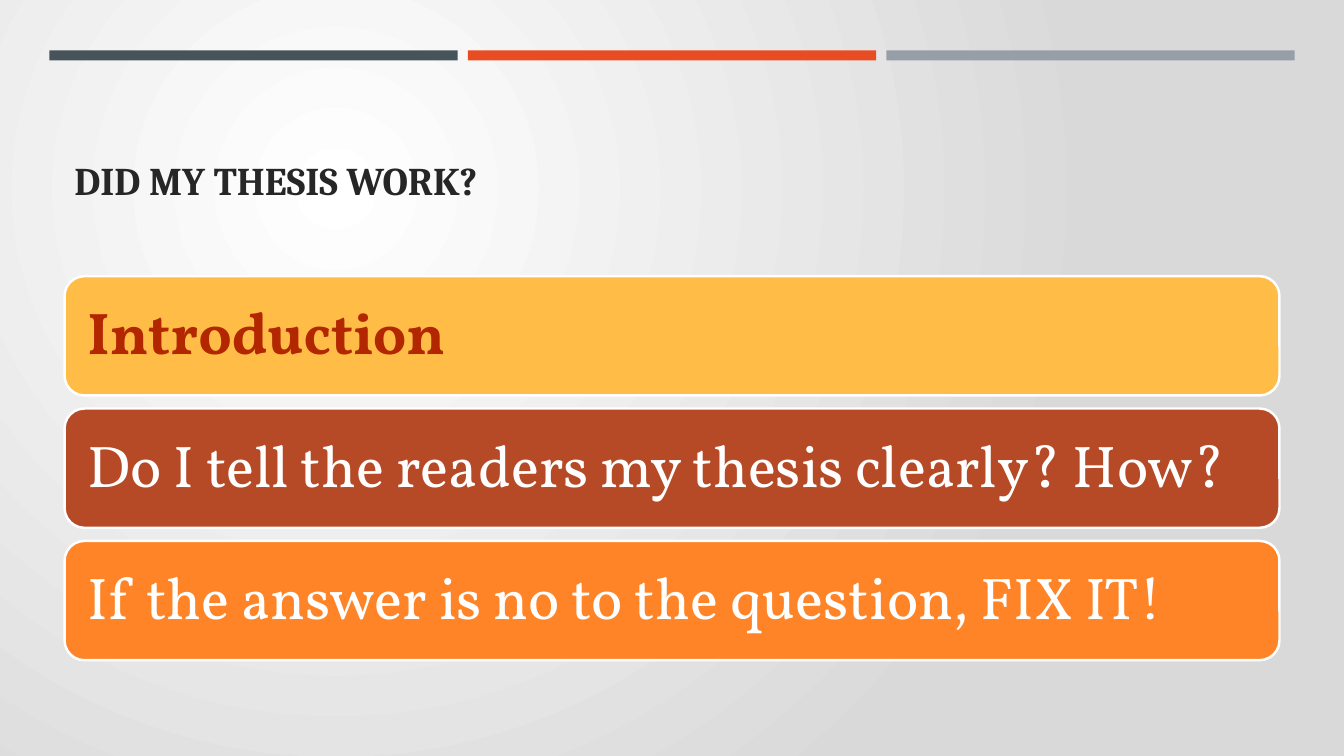
from dataclasses import dataclass

from lxml.etree import SubElement
from pptx import Presentation
from pptx.dml.color import RGBColor
from pptx.enum.shapes import MSO_SHAPE
from pptx.enum.text import MSO_ANCHOR, PP_ALIGN
from pptx.oxml.ns import qn
from pptx.util import Inches, Pt


@dataclass(frozen=True)
class Theme:
    head_font: str = "Cambria"
    body_font: str = "Vollkorn"
    head_size: int = 28
    body_size: int = 42
    ink: str = "262626"
    white: str = "FFFFFF"
    gray: str = "D9D9D9"
    red: str = "B22600"
    bars: tuple = ("465359", "E84C22", "969FA7")
    cards: tuple = ("FFBD47", "B64926", "FF8427")


@dataclass(frozen=True)
class Box:
    left: float
    top: float
    width: float
    height: float

    def inches(self):
        return [Inches(v) for v in (self.left, self.top, self.width, self.height)]

    def columns(self, count, gap):
        width = (self.width - gap * (count - 1)) / count
        return [Box(self.left + i * (width + gap), self.top, width, self.height)
                for i in range(count)]

    def rows(self, count, gap):
        height = (self.height - gap * (count - 1)) / count
        return [Box(self.left, self.top + i * (height + gap), self.width, height)
                for i in range(count)]


THEME = Theme()
WIDTH, HEIGHT = 13.33, 7.5


def color(code):
    return RGBColor.from_string(code)


def backdrop(slide):
    fill = slide.background.fill
    fill.gradient()
    for stop, place, code in zip(fill.gradient_stops, (0, 1), (THEME.white, THEME.gray)):
        stop.position = place
        stop.color.rgb = color(code)
    grad = slide.element.find(".//" + qn("a:gradFill"))
    grad.remove(grad.find(qn("a:lin")))
    round_path = SubElement(grad, qn("a:path"), {"path": "circle"})
    SubElement(round_path, qn("a:fillToRect"),
               {"l": "50000", "t": "50000", "r": "100000", "b": "100000"})


def panel(slide, kind, box, code):
    shape = slide.shapes.add_shape(kind, *box.inches())
    shape.shadow.inherit = False
    shape.fill.solid()
    shape.fill.fore_color.rgb = color(code)
    shape.line.fill.background()
    return shape


def write(frame, text, face, size, code, bold, anchor):
    frame.word_wrap = True
    frame.vertical_anchor = anchor
    line = frame.paragraphs[0]
    line.alignment = PP_ALIGN.LEFT
    line.line_spacing = 0.9
    run = line.add_run()
    run.text = text
    run.font.name = face
    run.font.size = Pt(size)
    run.font.bold = bold
    run.font.color.rgb = color(code)


def stripes(slide, box):
    for cell, code in zip(box.columns(len(THEME.bars), 0.1), THEME.bars):
        panel(slide, MSO_SHAPE.RECTANGLE, cell, code)


def heading(slide, box, text):
    frame = slide.shapes.add_textbox(*box.inches()).text_frame
    write(frame, text, THEME.head_font, THEME.head_size, THEME.ink, True,
          MSO_ANCHOR.BOTTOM)


def cards(slide, box, items):
    cells = box.rows(len(items), 0.13)
    for cell, code, (text, ink, bold) in zip(cells, THEME.cards, items):
        card = panel(slide, MSO_SHAPE.ROUNDED_RECTANGLE, cell, code)
        card.line.color.rgb = color(THEME.white)
        card.line.width = Pt(1.75)
        frame = card.text_frame
        frame.margin_left = frame.margin_right = Inches(0.17)
        frame.margin_top = frame.margin_bottom = Inches(0.17)
        write(frame, text, THEME.body_font, THEME.body_size, ink, bold,
              MSO_ANCHOR.MIDDLE)


def main():
    deck = Presentation()
    deck.slide_width, deck.slide_height = Inches(WIDTH), Inches(HEIGHT)
    slide = deck.slides.add_slide(deck.slide_layouts[6])
    edge, inset = 0.49, 0.64
    inner = WIDTH - 2 * inset
    backdrop(slide)
    stripes(slide, Box(edge, 0.5, WIDTH - 2 * edge, 0.1))
    heading(slide, Box(inset, 0.77, inner, 1.3), "DID MY THESIS WORK?")
    cards(slide, Box(inset, 2.74, inner, 3.81), (
        ("Introduction", THEME.red, True),
        ("Do I tell the readers my thesis clearly? How?", THEME.white, False),
        ("If the answer is no to the question, FIX IT!", THEME.white, False),
    ))
    deck.save("out.pptx")


if __name__ == "__main__":
    main()
